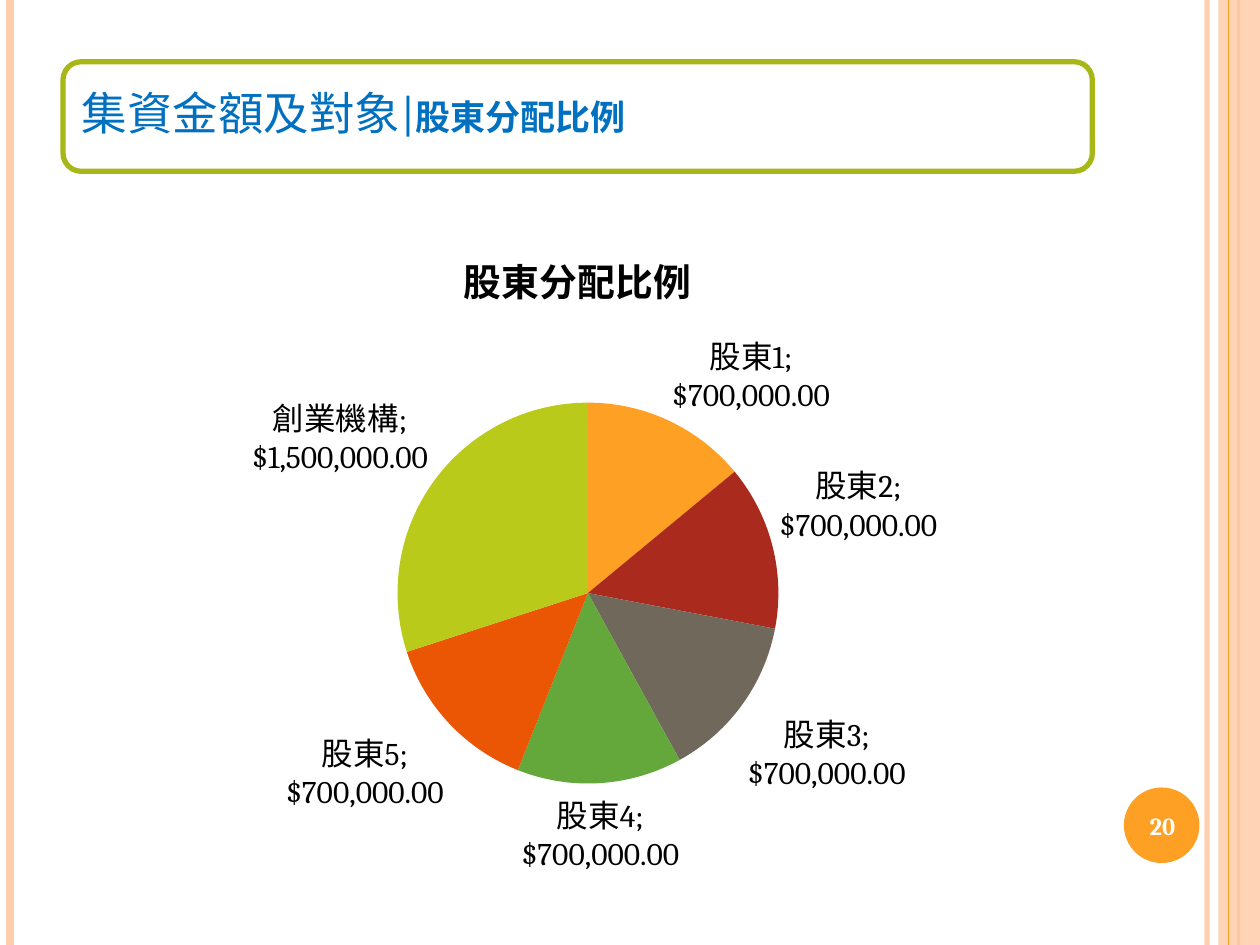
from lxml.etree import SubElement
from pptx import Presentation
from pptx.chart.data import CategoryChartData
from pptx.dml.color import RGBColor
from pptx.enum.chart import XL_CHART_TYPE as ChartType, XL_LABEL_POSITION as LabelPosition
from pptx.enum.shapes import MSO_CONNECTOR as Connector, MSO_SHAPE as Shape
from pptx.enum.text import MSO_ANCHOR as Anchor, MSO_AUTO_SIZE as AutoSize, PP_ALIGN as Align
from pptx.oxml.ns import qn
from pptx.util import Pt

PX = 9144  # 100 px to the inch
WIDTH, HEIGHT = 1000, 750
FONT = "Cambria"
COLORS = {
    "white": "FFFFFF", "black": "000000", "peach": "FECDAC", "orange": "FDA023",
    "olive": "A8B718", "blue": "0070C0", "red": "AA2B1E", "taupe": "71685C",
    "green": "64A73B", "rust": "EB5605", "lime": "B9CA1A",
}
# category, amount, slice colour
SHARES = [
    ("股東1", 700000, "orange"), ("股東2", 700000, "red"), ("股東3", 700000, "taupe"),
    ("股東4", 700000, "green"), ("股東5", 700000, "rust"), ("創業機構", 1500000, "lime"),
]


def rgb(name):
    return RGBColor.from_string(COLORS[name])


def box(*lengths):
    return [length * PX for length in lengths]


def set_opacity(element, percent):
    color = element.find(".//" + qn("a:srgbClr"))
    SubElement(color, qn("a:alpha"), val=str(percent * 1000))


def style_font(font, size, color, bold=False):
    font.name, font.size, font.bold = FONT, Pt(size), bold
    font.color.rgb = rgb(color)


def add_stripe(slide, x, color, weight, opacity=100):
    stripe = slide.shapes.add_connector(Connector.STRAIGHT, *box(x, 0, x, HEIGHT))
    stripe.line.color.rgb = rgb(color)
    stripe.line.width = Pt(weight)
    properties = stripe._element.spPr
    SubElement(properties, qn("a:effectLst"))
    if opacity < 100:
        set_opacity(properties, opacity)


def add_panel(slide, kind, bounds, fill, outline=None, opacity=100):
    panel = slide.shapes.add_shape(kind, *box(*bounds))
    panel.shadow.inherit = False
    panel.fill.solid()
    panel.fill.fore_color.rgb = rgb(fill)
    if opacity < 100:
        set_opacity(panel._element.spPr, opacity)
    if outline:
        panel.line.color.rgb = rgb(outline)
        panel.line.width = Pt(3)
    else:
        panel.line.fill.background()


def add_title(slide):
    title = slide.shapes.title
    slide.shapes._spTree.append(title._element)  # in front of its frame
    title.left, title.top, title.width, title.height = box(54, 53, 808, 78)
    frame = title.text_frame
    frame.auto_size, frame.word_wrap = AutoSize.NONE, True
    frame.vertical_anchor = Anchor.MIDDLE
    frame.margin_left = frame.margin_right = 11 * PX
    frame.margin_top = frame.margin_bottom = 11 * PX
    heading = frame.paragraphs[0]
    heading.alignment, heading.line_spacing = Align.LEFT, 0.9
    for wording, size, bold in [("集資金額及對象|", 26, False), ("股東分配比例", 20, True)]:
        run = heading.add_run()
        run.text = wording
        style_font(run.font, size, "blue", bold)


def place_plot(chart, **fractions):
    plot_area = chart._chartSpace.chart.plotArea
    layout = plot_area.find(qn("c:layout"))
    if layout is None:
        layout = SubElement(plot_area, qn("c:layout"))
        plot_area.insert(0, layout)
    manual = SubElement(layout, qn("c:manualLayout"))
    SubElement(manual, qn("c:layoutTarget"), val="inner")
    for axis in "xy":
        SubElement(manual, qn(f"c:{axis}Mode"), val="edge")
    for name, fraction in fractions.items():
        SubElement(manual, qn(f"c:{name}"), val=str(fraction))


def add_share_pie(slide):
    shares = CategoryChartData()
    shares.categories = [name for name, _, _ in SHARES]
    shares.add_series("Series 1", [amount for _, amount, _ in SHARES])
    chart = slide.shapes.add_chart(ChartType.PIE, *box(50, 175, 817, 533), shares).chart
    style_font(chart.font, 18, "black")
    chart.has_legend = False
    chart.has_title = True
    caption = chart.chart_title.text_frame
    caption.text = "股東分配比例"
    style_font(caption.paragraphs[0].runs[0].font, 21.6, "black", True)
    place_plot(chart, x=0.325, y=0.27, w=0.37, h=0.57)

    pie = chart.plots[0]
    pie.vary_by_categories = True
    for index, (_, _, color) in enumerate(SHARES):
        fill = pie.series[0].points[index].format.fill
        fill.solid()
        fill.fore_color.rgb = rgb(color)
    pie.has_data_labels = True
    labels = pie.data_labels
    labels.show_category_name = labels.show_value = True
    labels.show_percentage = False
    labels.number_format, labels.number_format_is_linked = '"$"#,##0.00', False
    labels.position = LabelPosition.OUTSIDE_END
    style_font(labels.font, 18, "black")


def add_page_number(slide):
    frame = slide.shapes.add_textbox(*box(889, 627, 67, 57)).text_frame
    frame.word_wrap = True
    frame.vertical_anchor = Anchor.MIDDLE
    number = frame.paragraphs[0]
    number.text = "20"
    number.alignment = Align.CENTER
    style_font(number.runs[0].font, 14, "white", True)


def main():
    deck = Presentation()
    deck.slide_width, deck.slide_height = box(WIDTH, HEIGHT)
    slide = deck.slides.add_slide(deck.slide_layouts[5])

    # Side stripes and page badge
    add_stripe(slide, 958, "peach", 3, opacity=93)
    add_stripe(slide, 8, "peach", 4.5)
    add_stripe(slide, 983, "orange", 1.5)
    add_panel(slide, Shape.RECTANGLE, (967, 0, 33, HEIGHT), "peach", opacity=87)
    add_stripe(slide, 975, "orange", 0.75)
    add_panel(slide, Shape.OVAL, (892, 625, 60, 60), "orange")

    # Framed title, chart and number
    add_panel(slide, Shape.ROUNDED_RECTANGLE, (50, 49, 817, 87), "white", outline="olive")
    add_title(slide)
    add_share_pie(slide)
    add_page_number(slide)
    deck.save("out.pptx")


if __name__ == "__main__":
    main()
